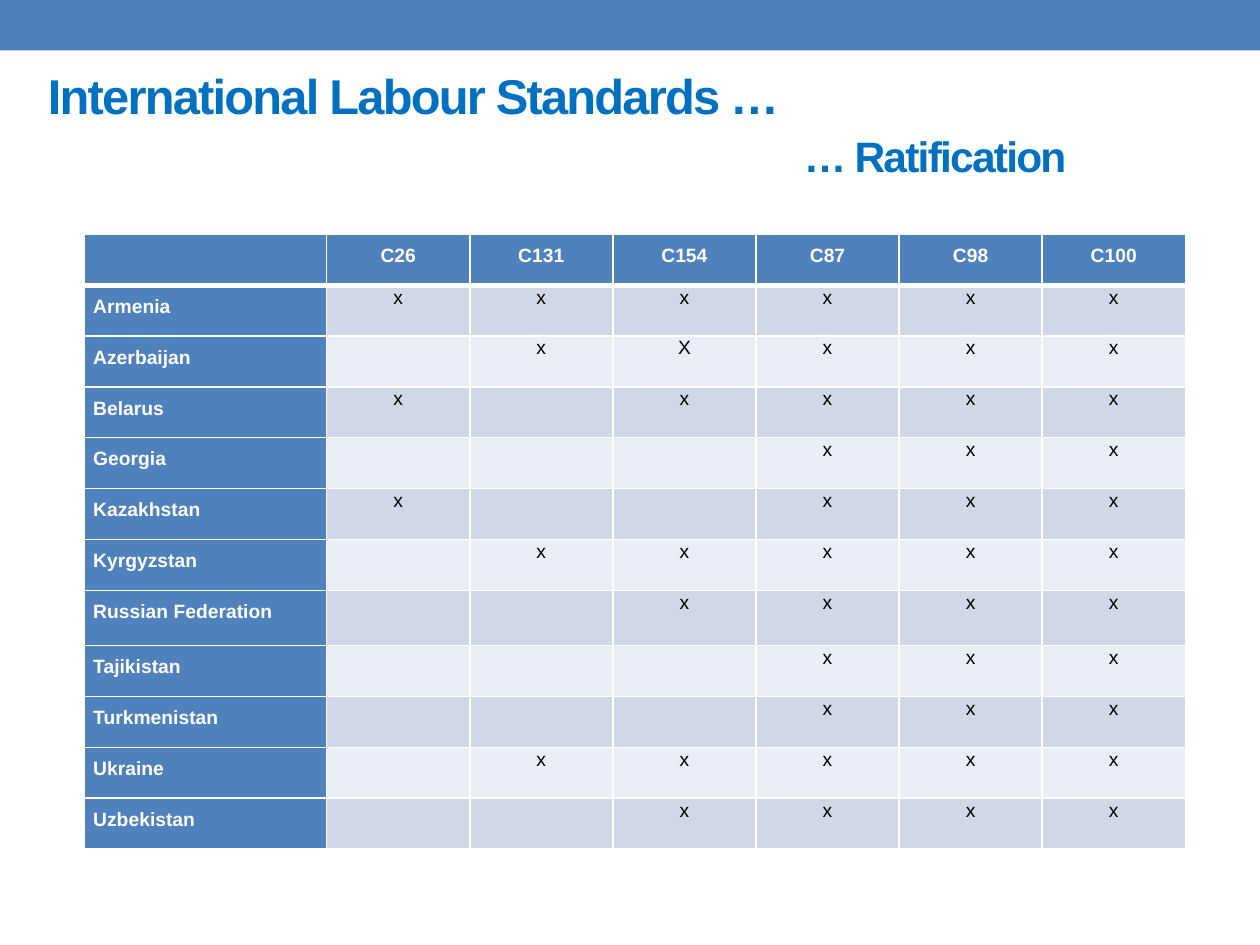
from lxml import etree
from pptx import Presentation
from pptx.dml.color import RGBColor
from pptx.enum.shapes import MSO_SHAPE
from pptx.enum.text import MSO_ANCHOR, MSO_AUTO_SIZE, PP_ALIGN
from pptx.oxml.ns import qn
from pptx.util import Inches, Pt

RECTANGLE = MSO_SHAPE.RECTANGLE
MIDDLE, TOP = MSO_ANCHOR.MIDDLE, MSO_ANCHOR.TOP
LEFT, CENTER = PP_ALIGN.LEFT, PP_ALIGN.CENTER
NO_AUTOFIT = MSO_AUTO_SIZE.NONE
TITLE_ONLY = 5

WIDTH, HEIGHT = 10, 7.5
NOT_RATIFIED = "-"
CONVENTIONS = ["C26", "C131", "C154", "C87", "C98", "C100"]
RATIFICATIONS = {
    "Armenia": "xxxxxx",
    "Azerbaijan": "-xXxxx",
    "Belarus": "x-xxxx",
    "Georgia": "---xxx",
    "Kazakhstan": "x--xxx",
    "Kyrgyzstan": "-xxxxx",
    "Russian Federation": "--xxxx",
    "Tajikistan": "---xxx",
    "Turkmenistan": "---xxx",
    "Ukraine": "-xxxxx",
    "Uzbekistan": "--xxxx",
}


def color(value):
    return RGBColor.from_string(value)


def paint(shape_or_cell, value):
    shape_or_cell.fill.solid()
    shape_or_cell.fill.fore_color.rgb = color(value)


def write(paragraph, text, size=11, fill="000000", bold=False, align=LEFT,
          line_spacing=1.0, tracking=0):
    paragraph.alignment = align
    paragraph.line_spacing = line_spacing
    run = paragraph.add_run()
    run.text = text
    run.font.name = "Arial"
    run.font.size = Pt(size)
    run.font.bold = bold
    run.font.color.rgb = color(fill)
    if tracking:
        run.font._element.set("spc", str(round(tracking * 100)))


def set_borders(cell, top=1, bottom=1):
    properties = cell._tc.get_or_add_tcPr()
    widths = {"lnL": 1, "lnR": 1, "lnT": top, "lnB": bottom}
    for index, (tag, width) in enumerate(widths.items()):
        line = etree.Element(qn(f"a:{tag}"), w=str(Pt(width)))
        solid = etree.SubElement(line, qn("a:solidFill"))
        etree.SubElement(solid, qn("a:srgbClr"), val="FFFFFF")
        properties.insert(index, line)


class SlideBuilder:
    """Holds the style and the current slide, and places elements by shares of its size."""

    accent = "4F81BD"
    heading = "0070C0"
    bands = ("D0D8E8", "E9EDF4")
    label_style = {"fill": "FFFFFF", "bold": True, "line_spacing": 1.5}
    mark_style = {"fill": "000000", "line_spacing": 1.07}
    header_rule = 3

    def __init__(self, presentation):
        layout = presentation.slide_layouts[TITLE_ONLY]
        self.slide = presentation.slides.add_slide(layout)

    def box(self, left, top, width, height):
        return (Inches(left * WIDTH), Inches(top * HEIGHT),
                Inches(width * WIDTH), Inches(height * HEIGHT))

    def banner(self, height):
        shape = self.slide.shapes.add_shape(RECTANGLE, *self.box(0, 0, 1, height))
        shape.shadow.inherit = False
        paint(shape, self.accent)
        shape.line.fill.background()

    def title(self, first, second, share, indent):
        shape = self.slide.shapes.title
        shape.left, shape.top, shape.width, shape.height = self.box(*share)
        frame = shape.text_frame
        frame.auto_size = NO_AUTOFIT
        frame.word_wrap = True
        frame.vertical_anchor = MIDDLE
        frame.margin_top = frame.margin_bottom = 0
        style = {"fill": self.heading, "bold": True, "tracking": -1}
        write(frame.paragraphs[0], first, size=27.9, **style)
        paragraph = frame.add_paragraph()
        paragraph.space_before = Pt(3)
        paragraph._p.get_or_add_pPr().set("marL", str(Inches(indent * WIDTH)))
        write(paragraph, second, size=24.3, **style)

    def table(self, headers, records, share, label_share, tall_row, tall_share):
        left, top, width, height = self.box(*share)
        table = self.slide.shapes.add_table(
            len(records) + 1, len(headers) + 1, left, top, width, height).table

        label_width = int(width * label_share)
        mark_width = (width - label_width) // len(headers)
        for index, column in enumerate(table.columns):
            column.width = mark_width if index else label_width

        tall_height = int(height * tall_share)
        row_height = (height - tall_height) // len(records)
        rows = [("", *headers)]
        rows += [(name, *marks) for name, marks in records.items()]
        for row_index, values in enumerate(rows):
            is_tall = values[0] == tall_row
            table.rows[row_index].height = tall_height if is_tall else row_height
            for column_index, value in enumerate(values):
                self.cell(table.cell(row_index, column_index), value,
                          row_index, column_index)

    def cell(self, cell, text, row, column):
        is_label = row == 0 or column == 0
        paint(cell, self.accent if is_label else self.bands[(row - 1) % 2])
        cell.vertical_anchor = TOP
        cell.margin_left = cell.margin_right = Inches(0.07)
        cell.margin_top = cell.margin_bottom = 0
        set_borders(cell, top=self.header_rule if row == 1 else 1,
                    bottom=self.header_rule if row == 0 else 1)
        if text and text != NOT_RATIFIED:
            style = self.label_style if is_label else self.mark_style
            write(cell.text_frame.paragraphs[0], text,
                  align=CENTER if column else LEFT, **style)


def main():
    presentation = Presentation()
    presentation.slide_width = Inches(WIDTH)
    presentation.slide_height = Inches(HEIGHT)
    builder = SlideBuilder(presentation)
    builder.banner(0.4 / HEIGHT)
    builder.title("International Labour Standards …", "… Ratification",
                  share=(0.28 / WIDTH, 0.58 / HEIGHT, 9.45 / WIDTH, 0.8 / HEIGHT),
                  indent=0.6)
    builder.table(CONVENTIONS, RATIFICATIONS,
                  share=(0.67 / WIDTH, 1.86 / HEIGHT, 8.74 / WIDTH, 4.88 / HEIGHT),
                  label_share=0.22, tall_row="Russian Federation", tall_share=0.09)
    presentation.save("out.pptx")


if __name__ == "__main__":
    main()
